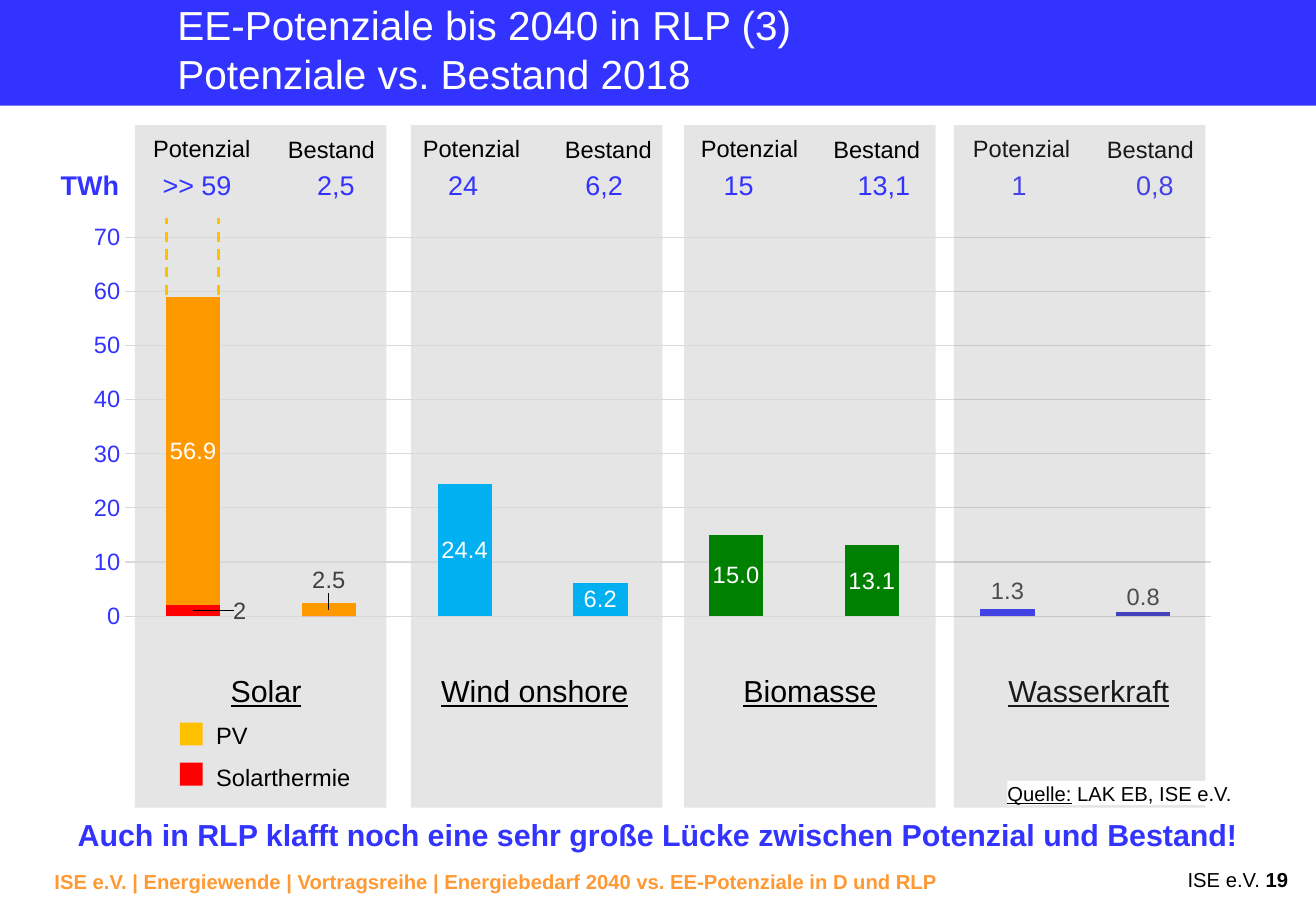
import pptx
import pptx.chart.data
import pptx.dml.color
import pptx.enum.chart
import pptx.enum.dml
import pptx.enum.shapes
import pptx.enum.text
import pptx.oxml
import pptx.oxml.ns
import pptx.util
from pptx.util import Cm

BLUE, ORANGE, BLACK, WHITE = "3333FF", "FF9900", "000000", "FFFFFF"
YELLOW, RED, GREY = "FFC000", "FF0000", "404040"
FONT = "Arial"
SLIDE_WIDTH, SLIDE_HEIGHT = 27.51, 19.05

PANEL_TOP, PANEL_WIDTH, PANEL_HEIGHT = 2.62, 5.26, 14.27
# Panel left, name (text, left, width), then per column:
# heading left, value text, value left, value width
ENERGY_SOURCES = [
    (2.82, ("Solar", 4.57, 2.01),
     [(2.95, ">> 59", 3.15, 1.98), (5.77, "2,5", 6.38, 1.3)]),
    (8.59, ("Wind onshore", 8.97, 4.47),
     [(8.59, "24", 9.12, 1.14), (11.56, "6,2", 11.99, 1.3)]),
    (14.3, ("Biomasse", 15.29, 3.33),
     [(14.4, "15", 14.88, 1.14), (17.17, "13,1", 17.68, 1.63)]),
    (19.94, ("Wasserkraft", 20.83, 3.91),
     [(20.09, "1", 20.9, 0.84), (22.89, "0,8", 23.5, 1.3)]),
]
# Heading text, top, width
HEADINGS = [("Potenzial", 2.67, 2.57), ("Bestand", 2.7, 2.34)]
# Text, width, text top, marker top, colour
LEGEND = [("PV", 1.17, 14.94, 15.11, YELLOW),
          ("Solarthermie", 3.33, 15.82, 15.95, RED)]

SOLAR_THERMAL = [2, 0] + [None] * 6
OTHER_YIELD = [56.9, 2.5, 24.4, 6.2, 15.0, 13.1, 1.3, 0.8]
BAR_COLOURS = [ORANGE, ORANGE, "00B0F0", "00B0F0", "008000", "008000", BLUE, "3333CC"]
# Labels moved off their bars, as fractions of the chart size
LABEL_OFFSETS = {1: (0, -0.07), 6: (0, -0.05), 7: (0, -0.04)}
PLOT_AREA = {"x": 0.05, "y": 0.05, "w": 0.93, "h": 0.9}


def rgb(colour):
    return pptx.dml.color.RGBColor.from_string(colour)


def xml(tag, **attributes):
    """Make an element such as 'c:layout' with the given attributes."""
    element = pptx.oxml.parse_xml(f"<{tag} {pptx.oxml.ns.nsdecls(tag.split(':')[0])}/>")
    for name, value in attributes.items():
        element.set(name, str(value))
    return element


def manual_layout(**settings):
    layout, manual = xml("c:layout"), xml("c:manualLayout")
    layout.append(manual)
    for name, value in settings.items():
        manual.append(xml(f"c:{name}", val=value))
    return layout


def style_font(font, size, colour, bold=False, underline=False):
    font.name, font.size = FONT, pptx.util.Pt(size)
    font.bold, font.underline = bold, underline
    font.color.rgb = rgb(colour)


def add_rectangle(slide, left, top, width, height, colour, alpha=None):
    shape = slide.shapes.add_shape(pptx.enum.shapes.MSO_SHAPE.RECTANGLE,
                                   Cm(left), Cm(top), Cm(width), Cm(height))
    shape.shadow.inherit = False
    shape.line.fill.background()
    shape.fill.solid()
    shape.fill.fore_color.rgb = rgb(colour)
    if alpha:
        colour_element = shape._element.spPr.find(".//" + pptx.oxml.ns.qn("a:srgbClr"))
        colour_element.append(xml("a:alpha", val=alpha * 1000))
    return shape


def add_panel(slide, left):
    add_rectangle(slide, left, PANEL_TOP, PANEL_WIDTH, PANEL_HEIGHT, "7F7F7F", alpha=20)


def write(shape, text, size=14, colour=BLACK, bold=False, underline=False,
          align="LEFT", wrap=False, inset=None, spacing=None):
    """Fill a shape with one paragraph; text is a string or (string, font changes) runs."""
    frame = shape.text_frame
    frame.word_wrap = wrap
    frame.vertical_anchor = pptx.enum.text.MSO_ANCHOR.TOP
    if inset is not None:
        frame.margin_left = frame.margin_right = Cm(inset)
        frame.margin_top = frame.margin_bottom = Cm(inset)
    paragraph = frame.paragraphs[0]
    paragraph.alignment = pptx.enum.text.PP_ALIGN[align]
    paragraph.line_spacing = spacing
    base = dict(size=size, colour=colour, bold=bold, underline=underline)
    for content, changes in [(text, {})] if isinstance(text, str) else text:
        for index, line in enumerate(content.split("\n")):
            if index:
                paragraph.add_line_break()
            run = paragraph.add_run()
            run.text = line
            style_font(run.font, **{**base, **changes})


def add_text(slide, text, left, top, width, height=0.86, **text_format):
    box = slide.shapes.add_textbox(Cm(left), Cm(top), Cm(width), Cm(height))
    write(box, text, **text_format)


def label_point(series, index, number_format, colour, offset=None):
    style_font(series.points[index].data_label.font, 14, colour)
    label_index = series._element.xpath(f"c:dLbls/c:dLbl/c:idx[@val='{index}']")[0]
    label_index.addnext(xml("c:numFmt", formatCode=number_format, sourceLinked=0))
    if offset:
        label_index.addnext(manual_layout(x=offset[0], y=offset[1]))


def fill_bar(bar, colour):
    bar.format.fill.solid()
    bar.format.fill.fore_color.rgb = rgb(colour)


def add_potential_chart(slide):
    data = pptx.chart.data.CategoryChartData()
    data.categories = [str(number) for number in range(1, 9)]
    data.add_series("Series 1", SOLAR_THERMAL)
    data.add_series("Series 2", OTHER_YIELD)
    chart = slide.shapes.add_chart(pptx.enum.chart.XL_CHART_TYPE.COLUMN_STACKED,
                                   Cm(1.4), Cm(4.52), Cm(24.41), Cm(8.81), data).chart
    chart.has_legend = chart.has_title = False
    style_font(chart.font, 10, BLACK)
    chart.category_axis.visible = False

    axis = chart.value_axis
    axis.minimum_scale, axis.maximum_scale, axis.major_unit = 0, 70, 10
    axis.major_tick_mark = pptx.enum.chart.XL_TICK_MARK.NONE
    axis.format.line.fill.background()
    axis.major_gridlines.format.line.color.rgb = rgb("D9D9D9")
    axis.major_gridlines.format.line.width = pptx.util.Pt(0.75)
    axis.tick_labels.number_format = "0"
    axis.tick_labels.number_format_is_linked = False
    style_font(axis.tick_labels.font, 14, BLUE)

    plot = chart.plots[0]
    plot.gap_width, plot.overlap, plot.vary_by_categories = 150, 100, False
    plot_area = chart._chartSpace.chart.plotArea
    for layout in plot_area.xpath("c:layout"):
        plot_area.remove(layout)
    plot_area.insert(0, manual_layout(layoutTarget="inner", xMode="edge",
                                      yMode="edge", **PLOT_AREA))

    thermal, other = plot.series
    fill_bar(thermal, RED)
    thermal.data_labels.show_value = False
    label_point(thermal, 0, "0", GREY, (0.04, 0))
    fill_bar(other, "3333CC")
    for index, colour in enumerate(BAR_COLOURS):
        fill_bar(other.points[index], colour)
        offset = LABEL_OFFSETS.get(index)
        label_point(other, index, "0.0", GREY if offset else WHITE, offset)


def add_dashed_line(slide, left, top, bottom):
    line = slide.shapes.add_connector(pptx.enum.shapes.MSO_CONNECTOR.STRAIGHT,
                                      Cm(left), Cm(bottom), Cm(left), Cm(top))
    line.line.color.rgb = rgb(YELLOW)
    line.line.width = pptx.util.Pt(1.5)
    line.line.dash_style = pptx.enum.dml.MSO_LINE.DASH
    line._element.spPr.append(xml("a:effectLst"))


def main():
    presentation = pptx.Presentation()
    presentation.slide_width, presentation.slide_height = Cm(SLIDE_WIDTH), Cm(SLIDE_HEIGHT)
    slide = presentation.slides.add_slide(presentation.slide_layouts[6])

    add_rectangle(slide, 0, 0, SLIDE_WIDTH, 2.21, BLUE)
    add_text(slide, "EE-Potenziale bis 2040 in RLP (3)\nPotenziale vs. Bestand 2018",
             3.71, 0, 20.73, 2.06, size=24, colour=WHITE, wrap=True, inset=0)
    add_text(slide, "ISE e.V. | Energiewende | Vortragsreihe | "
             "Energiebedarf 2040 vs. EE-Potenziale in D und RLP",
             0.89, 18.06, 19.05, 0.76, size=12, colour="FF9933", bold=True, wrap=True)
    add_text(slide, [("ISE e.V. ", {}), ("19", {"bold": True})],
             16.92, 18.06, 10.26, 0.71, size=12, align="RIGHT", wrap=True, spacing=0.9)

    *front_sources, hydropower = ENERGY_SOURCES
    for left, _, _ in front_sources:
        add_panel(slide, left)
    add_potential_chart(slide)
    add_text(slide, "Auch in RLP klafft noch eine sehr große Lücke zwischen Potenzial und Bestand!",
             0, 16.89, SLIDE_WIDTH, 1.12, size=18, colour=BLUE, bold=True,
             align="CENTER", wrap=True, inset=0.18)

    add_text(slide, "TWh", 1.02, 3.4, 1.75, 0.94, size=16, colour=BLUE, bold=True)
    for _, (name, name_left, name_width), columns in ENERGY_SOURCES:
        add_text(slide, name, name_left, 13.94, name_width, 1.02, size=18, underline=True)
        for (heading, top, width), column in zip(HEADINGS, columns):
            heading_left, value, value_left, value_width = column
            add_text(slide, heading, heading_left, top, width)
            add_text(slide, value, value_left, 3.4, value_width, 0.94, size=16, colour=BLUE)
    for text, width, text_top, marker_top, colour in LEGEND:
        add_text(slide, text, 4.27, text_top, width)
        add_rectangle(slide, 3.76, marker_top, 0.48, 0.48, colour)
    for left in (3.48, 4.57):
        add_dashed_line(slide, left, 4.55, 6.17)

    add_panel(slide, hydropower[0])
    source_box = add_rectangle(slide, 21.06, 16.33, 4.75, 0.51, WHITE)
    write(source_box, [("Quelle:", {"underline": True}), (" LAK EB, ISE e.V.", {})],
          size=12, inset=0)
    presentation.save("out.pptx")


if __name__ == "__main__":
    main()
